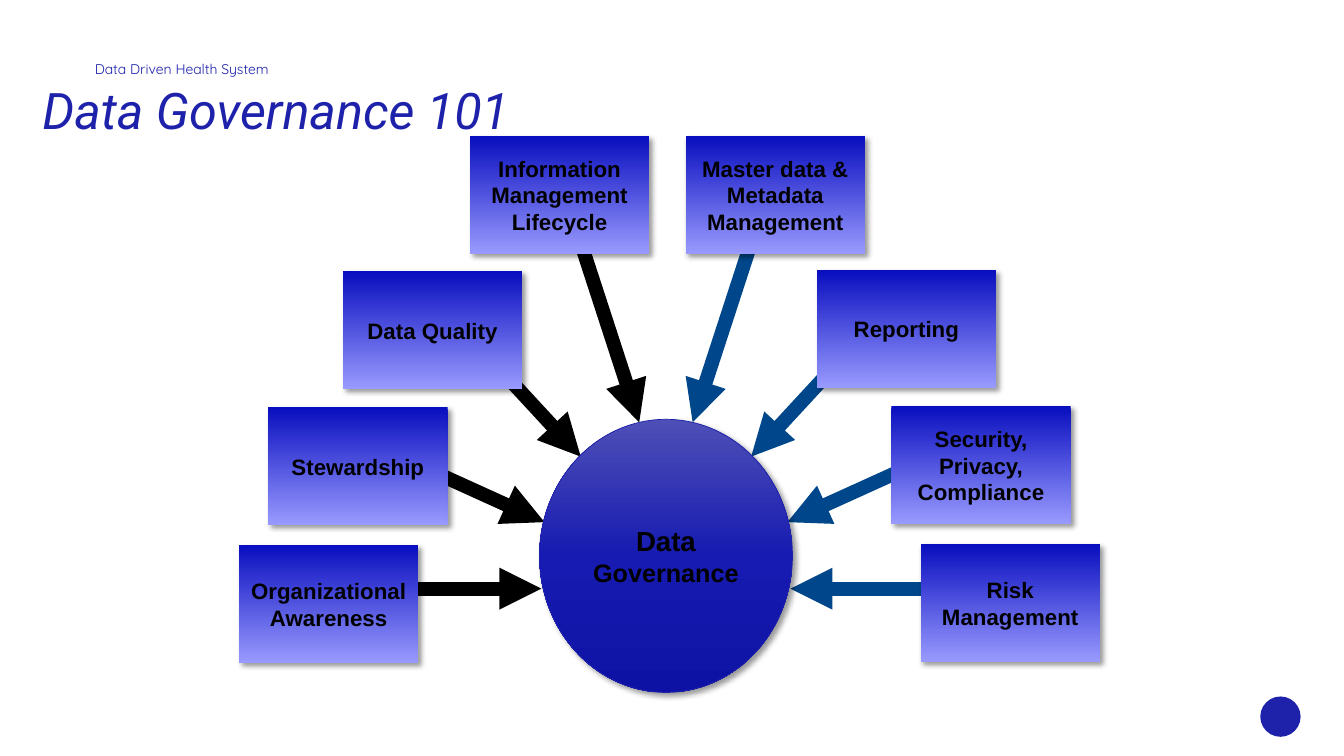
from lxml import etree
from pptx import Presentation
from pptx.dml.color import RGBColor
from pptx.enum.shapes import MSO_CONNECTOR as Connector, MSO_SHAPE as Shape
from pptx.enum.text import MSO_ANCHOR as Anchor, PP_ALIGN as Align
from pptx.oxml import parse_xml
from pptx.oxml.ns import nsdecls, qn
from pptx.util import Inches, Pt

BLUE, BLACK, STEEL = "1E22AA", "000000", "00468A"
CIRCLE_STOPS = [(0, "4E4FB6"), (50, "171BB1"), (100, "0E12A4")]
BOX_STOPS = [(0, "090EBF"), (100, "999AFE")]
BOX_SIZE = (1.78, 1.17)
MIDDLE = 6.605

# Left, top and lines of each topic box
TOPICS = [
    (4.66, 1.35, ["Information", "Management", "Lifecycle"]),
    (2.37, 5.41, ["Organizational Awareness"]),
    (2.66, 4.04, ["Stewardship"]),
    (3.4, 2.69, ["Data Quality"]),
    (6.8, 1.35, ["Master data &", "Metadata", "Management"]),
    (9.13, 5.4, ["Risk", "Management"]),
    (8.84, 4.03, ["Security,", "Privacy,", "Compliance"]),
    (8.1, 2.68, ["Reporting"]),
]

# Start and tip of each right-hand arrow; the left-hand ones mirror them
ARROWS = [
    ((7.42, 2.5), (6.87, 4.19)),
    ((8.18, 3.74), (7.45, 4.53)),
    ((8.89, 4.69), (7.81, 5.18)),
    ((9.13, 5.84), (7.84, 5.84)),
]


def color(code):
    return RGBColor.from_string(code)


class Board:
    def __init__(self, page):
        self.shapes = page.shapes

    def add_span(self, para, words, size, font, code, bold=False, italic=False):
        span = para.add_run()
        span.text = words
        span.font.size = Pt(size)
        span.font.name = font
        span.font.bold = bold
        span.font.italic = italic
        span.font.color.rgb = color(code)

    def heading(self, left, top, width, height, words, size, font, italic=False):
        box = self.shapes.add_textbox(*map(Inches, (left, top, width, height)))
        frame = box.text_frame
        frame.word_wrap = True
        frame.margin_left = frame.margin_right = 0
        frame.margin_top = frame.margin_bottom = 0
        para = frame.paragraphs[0]
        para.line_spacing = 0.75
        self.add_span(para, words, size, font, BLUE, italic=italic)

    def arrow(self, start, tip, code):
        line = self.shapes.add_connector(
            Connector.STRAIGHT, *map(Inches, (*start, *tip)))
        line.line.width = Pt(10)
        line.line.color.rgb = color(code)
        outline = line._element.spPr.find(qn("a:ln"))
        etree.SubElement(outline, qn("a:tailEnd"), type="triangle")
        etree.SubElement(line._element.spPr, qn("a:effectLst"))

    def shape(self, kind, left, top, width, height, edge=None):
        item = self.shapes.add_shape(
            kind, *map(Inches, (left, top, width, height)))
        item.shadow.inherit = False
        if edge:
            item.line.color.rgb = color(edge)
            item.line.width = Pt(0.5)
        else:
            item.line.fill.background()
        return item

    def dot(self, left, top, size):
        item = self.shape(Shape.OVAL, left, top, size, size)
        item.fill.solid()
        item.fill.fore_color.rgb = color(BLUE)

    def node(self, kind, left, top, width, height, stops, lines, edge=None):
        """Shaded shape with a soft shadow; each line is a list of (words, size)."""
        item = self.shape(kind, left, top, width, height, edge)
        self.shade(item, stops)
        self.cast_shadow(item)
        frame = item.text_frame
        frame.word_wrap = True
        frame.vertical_anchor = Anchor.MIDDLE
        for index, spans in enumerate(lines):
            para = frame.add_paragraph() if index else frame.paragraphs[0]
            para.alignment = Align.CENTER
            for words, size in spans:
                self.add_span(para, words, size, "Arial", BLACK, bold=True)

    def shade(self, item, stops):
        """Fill from top to bottom with the given (percent, colour) stops."""
        marks = "".join(
            f'<a:gs pos="{percent * 1000}"><a:srgbClr val="{code}"/></a:gs>'
            for percent, code in stops)
        item._element.spPr.find(qn("a:prstGeom")).addnext(parse_xml(
            f'<a:gradFill {nsdecls("a")} rotWithShape="1"><a:gsLst>{marks}'
            '</a:gsLst><a:lin ang="5400000" scaled="0"/></a:gradFill>'))

    def cast_shadow(self, item):
        effects = item._element.spPr.find(qn("a:effectLst"))
        effects.append(parse_xml(
            f'<a:outerShdw {nsdecls("a")} blurRad="{Pt(4)}" dist="{Pt(3)}" '
            'dir="2700000" algn="tl" rotWithShape="0"><a:srgbClr val="000000">'
            '<a:alpha val="40000"/></a:srgbClr></a:outerShdw>'))


def mirror(point):
    return 2 * MIDDLE - point[0], point[1]


def main():
    deck = Presentation()
    deck.slide_width, deck.slide_height = Inches(13.33), Inches(7.5)
    board = Board(deck.slides.add_slide(deck.slide_layouts[6]))

    board.dot(12.5, 6.91, 0.4)
    board.heading(0.94, 0.64, 6.02, 0.28, "Data Driven Health System", 10, "Quicksand")

    for start, tip in ARROWS:
        board.arrow(start, tip, STEEL)
        board.arrow(mirror(start), mirror(tip), BLACK)

    board.node(Shape.OVAL, 5.35, 4.16, 2.51, 2.71, CIRCLE_STOPS,
               [[("Data ", 19.7), ("Governance", 18)]], BLUE)
    for left, top, lines in TOPICS:
        board.node(Shape.RECTANGLE, left, top, *BOX_SIZE, BOX_STOPS,
                   [[(words, 15.9)] for words in lines])

    board.heading(0.42, 0.92, 9.51, 0.75, "Data Governance 101", 36, "Roboto", italic=True)
    deck.save("out.pptx")


if __name__ == "__main__":
    main()
